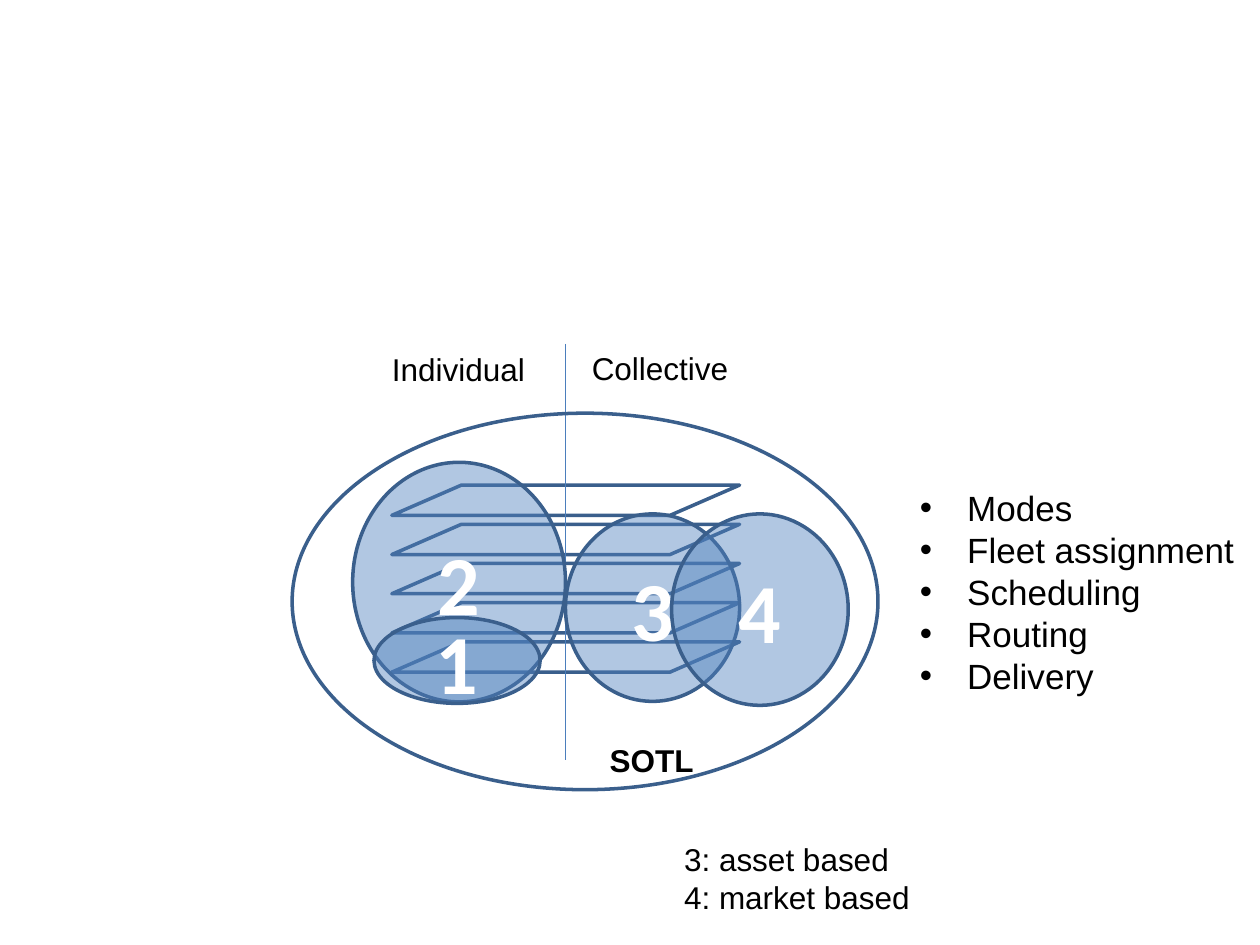
from pptx import Presentation
from pptx.dml.color import RGBColor
from pptx.enum.shapes import MSO_CONNECTOR, MSO_SHAPE
from pptx.enum.text import MSO_ANCHOR, MSO_AUTO_SIZE, PP_ALIGN
from pptx.oxml.ns import qn
from pptx.util import Cm, Pt
from lxml.etree import SubElement

OUTLINE = RGBColor(0x3A, 0x5F, 0x8C)
DIVIDER = RGBColor(0x4B, 0x7E, 0xBC)
CIRCLE_FILL = RGBColor(0x4F, 0x81, 0xBD)
BLACK = RGBColor(0, 0, 0)
WHITE = RGBColor(0xFF, 0xFF, 0xFF)

LAYER_COUNT = 5
LAYER_TOP = 9.78
LAYER_STEP = 0.79
TOPICS = ["Modes", "Fleet assignment", "Scheduling", "Routing", "Delivery"]


def format_runs(text_frame, size, color, font="Arial", bold=False):
    """Apply one character format to all runs of a text frame."""
    for paragraph in text_frame.paragraphs:
        for run in paragraph.runs:
            run.font.name = font
            run.font.size = Pt(size)
            run.font.bold = bold
            run.font.color.rgb = color


def add_outline(slide, kind, left, top, width, height):
    """Add an unfilled shape with the common outline."""
    shape = slide.shapes.add_shape(kind, Cm(left), Cm(top), Cm(width), Cm(height))
    shape.shadow.inherit = False
    shape.fill.background()
    shape.line.color.rgb = OUTLINE
    shape.line.width = Pt(2)
    return shape


def add_circle(slide, number, left, top, width, height):
    """Add a translucent ellipse with a large number."""
    shape = add_outline(slide, MSO_SHAPE.OVAL, left, top, width, height)
    shape.fill.solid()
    shape.fill.fore_color.rgb = CIRCLE_FILL
    color = shape._element.spPr.find(qn("a:solidFill")).find(qn("a:srgbClr"))
    SubElement(color, qn("a:alpha"), val="44000")
    text_frame = shape.text_frame
    text_frame.text = number
    text_frame.vertical_anchor = MSO_ANCHOR.MIDDLE
    text_frame.paragraphs[0].alignment = PP_ALIGN.CENTER
    format_runs(text_frame, 48, WHITE, "Calibri", True)


def add_label(slide, text, left, top, width, height, bold=False):
    """Add a text box that grows with its unwrapped text."""
    label = slide.shapes.add_textbox(Cm(left), Cm(top), Cm(width), Cm(height))
    text_frame = label.text_frame
    text_frame.text = text
    text_frame.word_wrap = False
    text_frame.auto_size = MSO_AUTO_SIZE.SHAPE_TO_FIT_TEXT
    format_runs(text_frame, 18, BLACK, bold=bold)


def add_divider(slide, x, top, bottom):
    """Add the thin vertical line between both halves."""
    line = slide.shapes.add_connector(MSO_CONNECTOR.STRAIGHT, Cm(x), Cm(top), Cm(x), Cm(bottom))
    line.line.color.rgb = DIVIDER
    line.line.width = Pt(0.75)
    SubElement(line._element.spPr, qn("a:effectLst"))


def fill_topics(placeholder, left, top, width, height):
    """Place the bullet list in the body placeholder."""
    placeholder.left, placeholder.top = Cm(left), Cm(top)
    placeholder.width, placeholder.height = Cm(width), Cm(height)
    text_frame = placeholder.text_frame
    text_frame.text = "\n".join(TOPICS)
    text_frame.word_wrap = False
    text_frame.auto_size = MSO_AUTO_SIZE.SHAPE_TO_FIT_TEXT
    for paragraph in text_frame.paragraphs:
        paragraph.space_before = Pt(0)
    format_runs(text_frame, 20, BLACK)


def main():
    """Build and save the slide."""
    presentation = Presentation()
    presentation.slide_width, presentation.slide_height = Cm(25.4), Cm(19.05)
    slide = presentation.slides.add_slide(presentation.slide_layouts[1])
    title = slide.shapes.title._element
    title.getparent().remove(title)

    for index in range(LAYER_COUNT):
        top = LAYER_TOP + index * LAYER_STEP
        add_outline(slide, MSO_SHAPE.FLOWCHART_DATA, 7.9, top, 7.01, 0.61)
    add_divider(slide, 11.4, 6.93, 15.32)
    add_label(slide, "Individual", 7.65, 6.93, 3.23, 1.02)
    add_label(slide, "Collective", 11.68, 6.91, 3.3, 1.02)
    add_circle(slide, "2", 7.11, 9.32, 4.29, 4.83)
    add_circle(slide, "3", 11.4, 10.36, 3.51, 3.78)
    fill_topics(slide.placeholders[1], 18.29, 9.68, 6.91, 4.52)
    add_circle(slide, "4", 13.54, 10.36, 3.56, 3.86)
    add_label(slide, "3: asset based\n4: market based", 13.54, 16.81, 5.11, 1.8)
    add_outline(slide, MSO_SHAPE.OVAL, 5.89, 8.33, 11.81, 7.59)
    add_circle(slide, "1", 7.54, 12.45, 3.35, 1.73)
    add_label(slide, "SOTL", 12.04, 14.81, 2.24, 1.02, bold=True)
    presentation.save("out.pptx")


if __name__ == "__main__":
    main()
